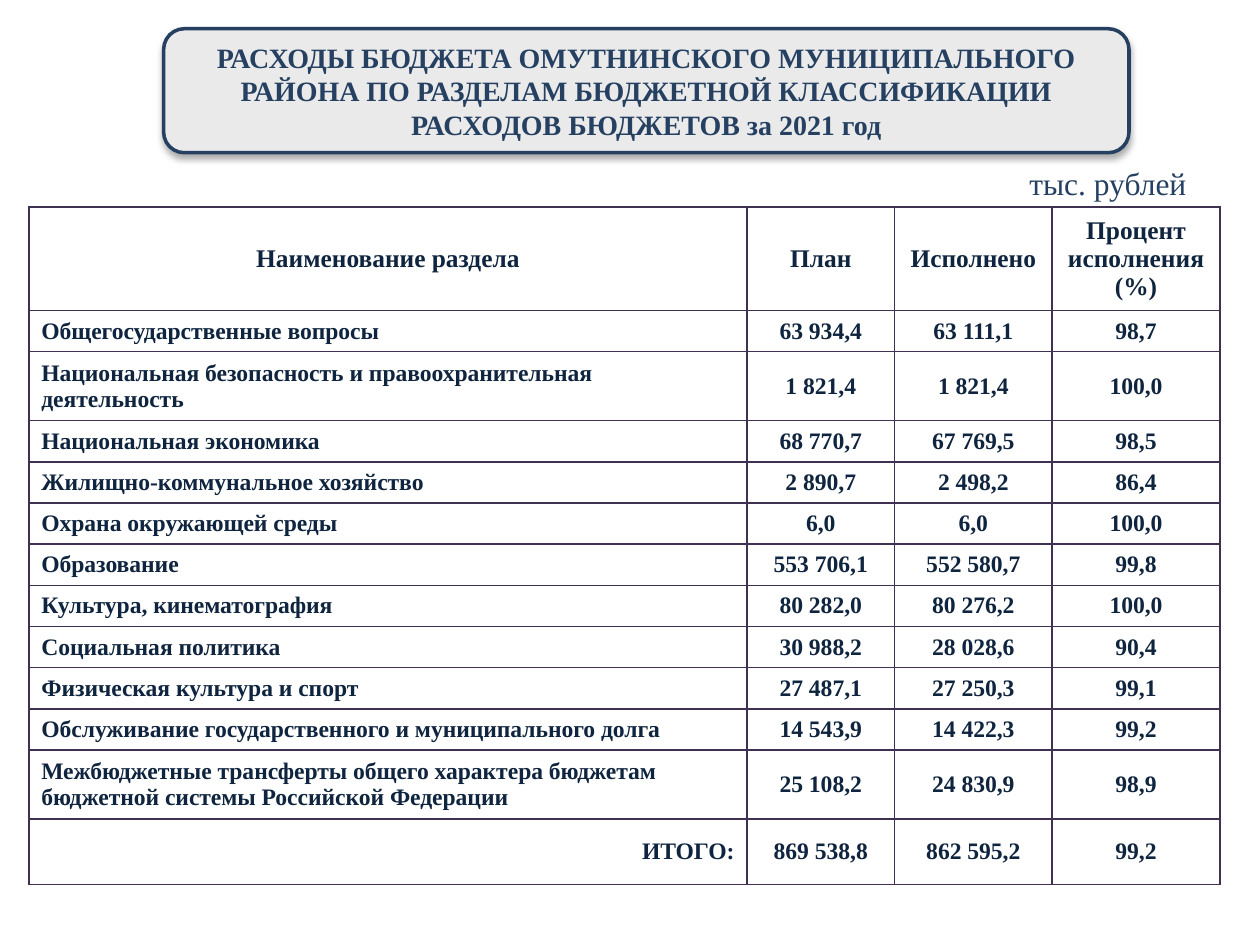
from dataclasses import dataclass

from lxml.etree import SubElement
from pptx import Presentation
from pptx.dml.color import RGBColor as Rgb
from pptx.enum.shapes import MSO_SHAPE as Shape
from pptx.enum.text import MSO_ANCHOR as Anchor, MSO_AUTO_SIZE as AutoSize, PP_ALIGN as Align
from pptx.oxml.ns import qn
from pptx.util import Cm, Pt


@dataclass(frozen=True)
class Theme:
    font: str = "Times New Roman"
    navy: str = "254061"
    ink: str = "0F243E"
    panel: str = "EAEAEA"
    white: str = "FFFFFF"
    border: str = "403152"
    shadow: str = "000000"
    title_size: float = 16
    unit_size: float = 18
    header_size: float = 14.5
    body_size: float = 13.5


class SlideBuilder:
    """Draws styled elements on the current slide."""

    def __init__(self, presentation, theme):
        self.theme = theme
        self.slide = presentation.slides.add_slide(presentation.slide_layouts[5])

    def set_text(self, text_frame, text, size, color, align, bold=True):
        text_frame.text = text
        text_frame.word_wrap = True
        paragraph = text_frame.paragraphs[0]
        paragraph.alignment = align
        for run in paragraph.runs:
            font = run.font
            font.name, font.size, font.bold = self.theme.font, Pt(size), bold
            font.color.rgb = Rgb.from_string(color)

    def panel(self, box):
        shape = self.slide.shapes.add_shape(Shape.ROUNDED_RECTANGLE, *map(Cm, box))
        shape.fill.solid()
        shape.fill.fore_color.rgb = Rgb.from_string(self.theme.panel)
        shape.line.color.rgb = Rgb.from_string(self.theme.navy)
        shape.line.width = Pt(2)
        shape.shadow.inherit = False
        effects = shape._element.spPr.find(qn("a:effectLst"))
        shadow = SubElement(effects, qn("a:outerShdw"), blurRad=str(Pt(3.5)),
                            dist=str(Pt(2.2)), dir="5400000", rotWithShape="0")
        color = SubElement(shadow, qn("a:srgbClr"), val=self.theme.shadow)
        SubElement(color, qn("a:alpha"), val="32000")
        return shape

    def title(self, text, box):
        panel = self.panel(box)
        title = self.slide.shapes.title
        title.left, title.top, title.width, title.height = map(Cm, box)
        panel._element.addnext(title._element)
        self.set_text(title.text_frame, text, self.theme.title_size, self.theme.navy, Align.CENTER)
        title.text_frame.auto_size = AutoSize.NONE
        title.text_frame.vertical_anchor = Anchor.MIDDLE

    def label(self, text, box):
        shape = self.slide.shapes.add_textbox(*map(Cm, box))
        self.set_text(shape.text_frame, text, self.theme.unit_size, self.theme.navy,
                      Align.LEFT, False)

    def borders(self, cell):
        properties = cell._tc.get_or_add_tcPr()
        for side in ("lnL", "lnR", "lnT", "lnB"):
            line = SubElement(properties, qn(f"a:{side}"), w=str(Pt(1)))
            fill = SubElement(line, qn("a:solidFill"))
            SubElement(fill, qn("a:srgbClr"), val=self.theme.border)

    def cell(self, cell, text, size, align):
        self.set_text(cell.text_frame, text, size, self.theme.ink, align)
        cell.vertical_anchor = Anchor.MIDDLE
        self.borders(cell)
        cell.fill.solid()
        cell.fill.fore_color.rgb = Rgb.from_string(self.theme.white)

    def table(self, rows, left, top, widths, heights):
        frame = self.slide.shapes.add_table(len(rows), len(widths), Cm(left), Cm(top),
                                            Cm(sum(widths)), Cm(sum(heights)))
        table = frame.table
        table.first_row = table.horz_banding = False
        for column, width in zip(table.columns, widths):
            column.width = Cm(width)
        name_aligns = {0: Align.CENTER, len(rows) - 1: Align.RIGHT}
        for r, (values, height) in enumerate(zip(rows, heights)):
            table.rows[r].height = Cm(height)
            size = self.theme.body_size if r else self.theme.header_size
            for c, text in enumerate(values):
                align = Align.CENTER if c else name_aligns.get(r, Align.LEFT)
                self.cell(table.cell(r, c), text, size, align)


ROWS = [
    ("Наименование раздела", "План", "Исполнено", "Процент исполнения (%)"),
    ("Общегосударственные вопросы", "63 934,4", "63 111,1", "98,7"),
    ("Национальная безопасность и правоохранительная деятельность", "1 821,4", "1 821,4", "100,0"),
    ("Национальная экономика", "68 770,7", "67 769,5", "98,5"),
    ("Жилищно-коммунальное хозяйство", "2 890,7", "2 498,2", "86,4"),
    ("Охрана окружающей среды", "6,0", "6,0", "100,0"),
    ("Образование", "553 706,1", "552 580,7", "99,8"),
    ("Культура, кинематография", "80 282,0", "80 276,2", "100,0"),
    ("Социальная политика", "30 988,2", "28 028,6", "90,4"),
    ("Физическая культура и спорт", "27 487,1", "27 250,3", "99,1"),
    ("Обслуживание государственного и муниципального долга", "14 543,9", "14 422,3", "99,2"),
    ("Межбюджетные трансферты общего характера бюджетам бюджетной системы Российской Федерации",
     "25 108,2", "24 830,9", "98,9"),
    ("ИТОГО:", "869 538,8", "862 595,2", "99,2"),
]
TITLE = ("РАСХОДЫ БЮДЖЕТА ОМУТНИНСКОГО МУНИЦИПАЛЬНОГО РАЙОНА ПО РАЗДЕЛАМ "
         "БЮДЖЕТНОЙ КЛАССИФИКАЦИИ РАСХОДОВ БЮДЖЕТОВ за 2021 год")
SINGLE, DOUBLE = 0.83, 1.39


def main():
    presentation = Presentation()
    presentation.slide_width, presentation.slide_height = Cm(25.4), Cm(19.05)
    builder = SlideBuilder(presentation, Theme())
    heights = [2.09] + [DOUBLE if len(row[0]) > 55 else SINGLE for row in ROWS[1:-1]] + [1.32]
    builder.table(ROWS, 0.58, 4.17, (14.48, 2.97, 3.18, 3.38), heights)
    builder.label("тыс. рублей", (20.5, 3.18, 4.5, 1.02))
    builder.title(TITLE, (3.3, 0.58, 19.46, 2.5))
    presentation.save("out.pptx")


if __name__ == "__main__":
    main()
